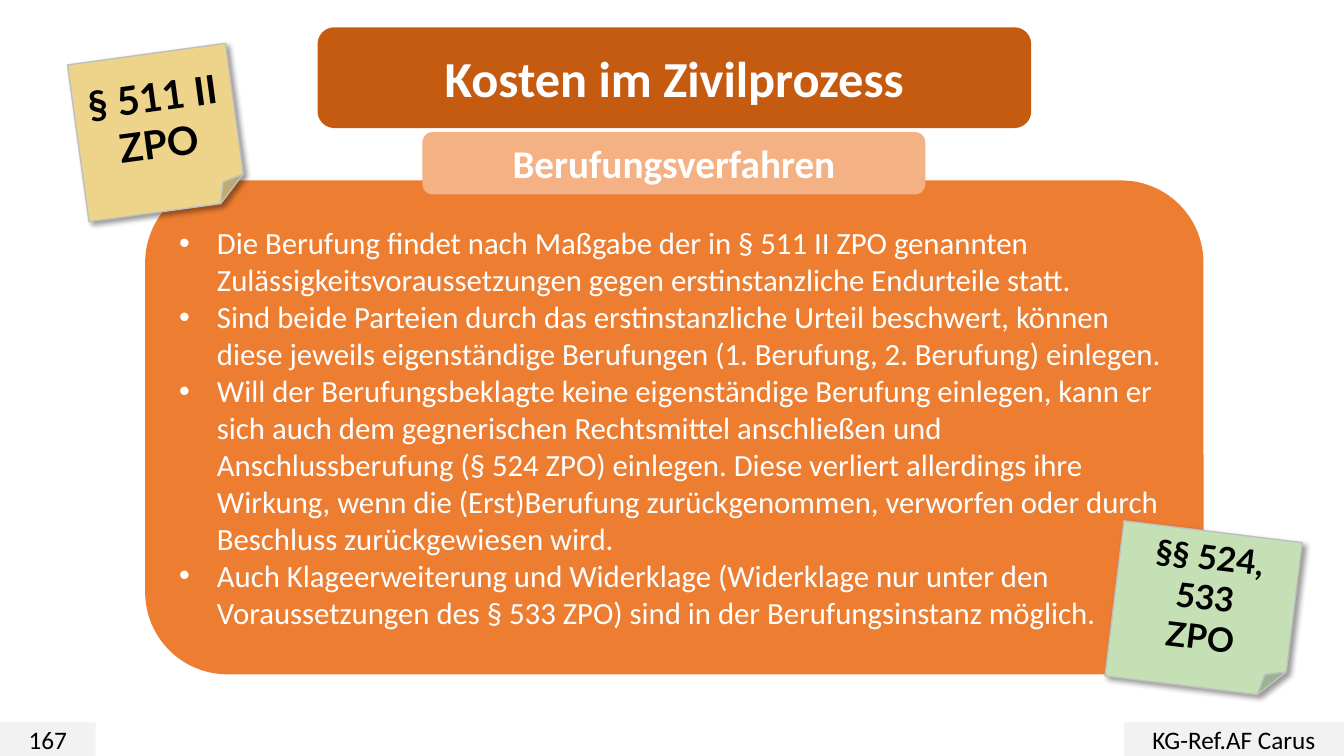
import dataclasses

import lxml.etree
import pptx
import pptx.dml.color
import pptx.enum.shapes
import pptx.enum.text
import pptx.oxml
import pptx.oxml.ns
import pptx.util

SHAPE = pptx.enum.shapes.MSO_SHAPE
ALIGN = pptx.enum.text.PP_ALIGN
Pt = pptx.util.Pt

COLORS: dict[str, str] = {
    "white": "FFFFFF",
    "black": "000000",
    "footer": "F2F2F2",
    "title": "C55A11",
    "subtitle": "F4B183",
    "body": "ED7D31",
    "yellow": "EED48A",
    "green": "C5E0B4",
    "edge": "BFBFBF",
}

SLIDE_WIDTH, SLIDE_HEIGHT = 960, 540
FOOTER_HEIGHT = 24
FOOTER_TOP = SLIDE_HEIGHT - FOOTER_HEIGHT
AUTHOR_WIDTH = 157.2
BULLET_INDENT = 27


@dataclasses.dataclass(frozen=True)
class Panel:
    paragraphs: tuple[str, ...]
    left: float
    top: float
    width: float
    height: float
    fill: str
    size: float
    preset: SHAPE = SHAPE.ROUNDED_RECTANGLE
    font: str = "Calibri"
    color: str = "white"
    bold: bool = False
    bulleted: bool = False
    rotation: float = 0
    note: bool = False


BODY_TEXT = (
    "Die Berufung findet nach Maßgabe der in § 511 II ZPO genannten "
    "Zulässigkeitsvoraussetzungen gegen erstinstanzliche Endurteile statt.",
    "Sind beide Parteien durch das erstinstanzliche Urteil beschwert, können "
    "diese jeweils eigenständige Berufungen (1. Berufung, 2. Berufung) einlegen.",
    "Will der Berufungsbeklagte keine eigenständige Berufung einlegen, kann er "
    "sich auch dem gegnerischen Rechtsmittel anschließen und Anschlussberufung "
    "(§ 524 ZPO) einlegen. Diese verliert allerdings ihre Wirkung, wenn die "
    "(Erst)Berufung zurückgenommen, verworfen oder durch Beschluss "
    "zurückgewiesen wird.",
    "Auch Klageerweiterung und Widerklage (Widerklage nur unter den "
    "Voraussetzungen des § 533 ZPO) sind in der Berufungsinstanz möglich.",
)


def footer(text: str, left: float, width: float) -> Panel:
    return Panel((text,), left, FOOTER_TOP, width, FOOTER_HEIGHT, "footer", 18,
                 preset=SHAPE.RECTANGLE, color="black")


def sticky_note(paragraphs: tuple[str, ...], left: float, top: float, width: float,
                height: float, fill: str, size: float, rotation: float) -> Panel:
    return Panel(paragraphs, left, top, width, height, fill, size,
                 preset=SHAPE.FOLDED_CORNER, font="Lato", color="black",
                 bold=True, rotation=rotation, note=True)


PANELS = (
    footer("167", 0, 68.4),
    footer("KG-Ref.AF Carus", SLIDE_WIDTH - AUTHOR_WIDTH, AUTHOR_WIDTH),
    Panel(("Kosten im Zivilprozess",), 226.8, 19.5, 509.8, 72, "title", 36, bold=True),
    Panel(BODY_TEXT, 103.7, 128.9, 756, 352.8, "body", 22, bulleted=True),
    Panel(("Berufungsverfahren",), 301.7, 94.3, 359.3, 44.6, "subtitle", 28, bold=True),
    sticky_note(("§ 511 II ZPO",), 55.4, 38.2, 113.8, 113, "yellow", 28, 352.2),
    sticky_note(("§§ 524,", "533", "ZPO"), 795.6, 379.4, 128.2, 111.6, "green", 24, 7),
)


def rgb(name: str) -> pptx.dml.color.RGBColor:
    return pptx.dml.color.RGBColor.from_string(COLORS[name])


def add_bullet(para: pptx.text.text._Paragraph) -> None:
    properties = para._p.get_or_add_pPr()
    properties.set("marL", str(Pt(BULLET_INDENT)))
    properties.set("indent", str(-Pt(BULLET_INDENT)))
    tag = pptx.oxml.ns.qn
    lxml.etree.SubElement(properties, tag("a:buFont")).set("typeface", "Arial")
    lxml.etree.SubElement(properties, tag("a:buChar")).set("char", "•")


def write_text(para: pptx.text.text._Paragraph, text: str, *, size: float, font: str,
               color: str, bold: bool, bulleted: bool) -> None:
    para.alignment = ALIGN.LEFT if bulleted else ALIGN.CENTER
    if bulleted:
        add_bullet(para)
    span = para.add_run()
    span.text = text
    span.font.size = Pt(size)
    span.font.name = font
    span.font.bold = bold
    span.font.color.rgb = rgb(color)


def add_note_shadow(box: pptx.shapes.autoshape.Shape) -> None:
    effects = box._element.spPr.find(pptx.oxml.ns.qn("a:effectLst"))
    effects.append(pptx.oxml.parse_xml(
        f'<a:outerShdw {pptx.oxml.ns.nsdecls("a")} blurRad="{Pt(4)}" dist="{Pt(3)}" '
        'dir="2700000" algn="tl" rotWithShape="0">'
        f'<a:srgbClr val="{COLORS["black"]}"><a:alpha val="40000"/></a:srgbClr>'
        '</a:outerShdw>'))


def draw_panel(page: pptx.slide.Slide, panel: Panel) -> None:
    box = page.shapes.add_shape(panel.preset, Pt(panel.left), Pt(panel.top),
                                Pt(panel.width), Pt(panel.height))
    box.rotation = panel.rotation
    box.fill.solid()
    box.fill.fore_color.rgb = rgb(panel.fill)
    box.line.fill.background()
    box.shadow.inherit = False
    if panel.note:
        box.line.color.rgb = rgb("edge")
        box.line.width = Pt(1)
        add_note_shadow(box)
    frame = box.text_frame
    frame.word_wrap = True
    frame.vertical_anchor = pptx.enum.text.MSO_ANCHOR.MIDDLE
    for index, text in enumerate(panel.paragraphs):
        para = frame.add_paragraph() if index else frame.paragraphs[0]
        write_text(para, text, size=panel.size, font=panel.font, color=panel.color,
                   bold=panel.bold, bulleted=panel.bulleted)


def main() -> None:
    deck = pptx.Presentation()
    deck.slide_width = Pt(SLIDE_WIDTH)
    deck.slide_height = Pt(SLIDE_HEIGHT)
    page = deck.slides.add_slide(deck.slide_layouts[6])
    for panel in PANELS:
        draw_panel(page, panel)
    deck.save("out.pptx")


if __name__ == "__main__":
    main()
